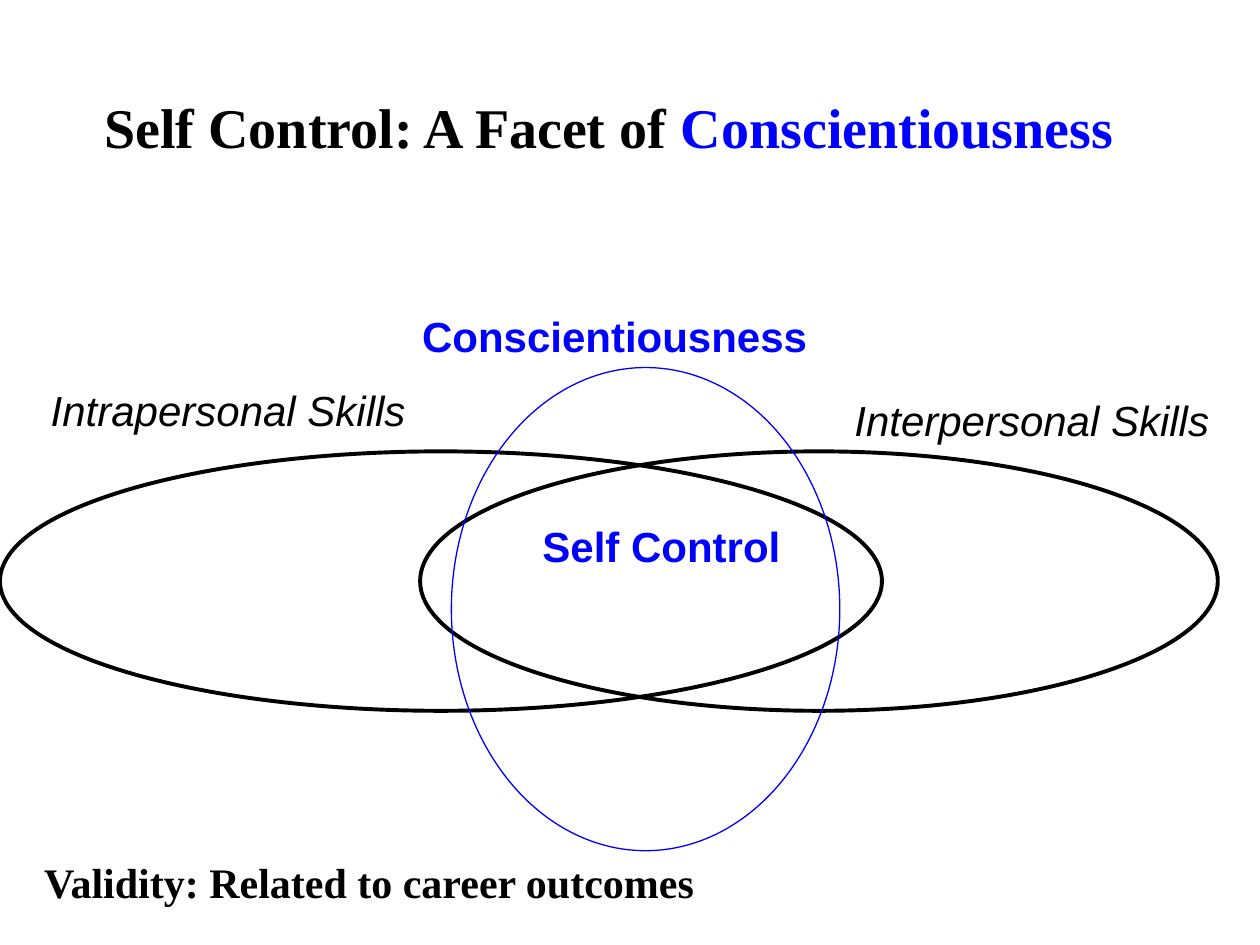
from pptx import Presentation
from pptx.dml.color import RGBColor
from pptx.enum.shapes import MSO_SHAPE
from pptx.enum.text import MSO_ANCHOR, PP_ALIGN
from pptx.util import Cm, Pt

OVAL = MSO_SHAPE.OVAL
TOP, MIDDLE = MSO_ANCHOR.TOP, MSO_ANCHOR.MIDDLE
LEFT, CENTER = PP_ALIGN.LEFT, PP_ALIGN.CENTER


class Theme:
    black = RGBColor(0x00, 0x00, 0x00)
    blue = RGBColor(0x00, 0x00, 0xFF)
    serif = "Times New Roman"
    sans = "Arial"
    title_size = 32
    text_size = 24


# Boxes are left, top, width, height in centimetres.
TITLE_BOX = (0, 1.27, 24.56, 2.54)
TITLE_RUNS = [
    ("Self Control: A Facet of ", Theme.black),
    ("Conscientiousness", Theme.blue),
]

# box, line colour, line width in points
ELLIPSES = [
    ((0, 9.1, 17.78, 5.23), Theme.black, 2.25),
    ((8.47, 9.1, 16.08, 5.23), Theme.black, 2.25),
    ((9.1, 7.41, 7.83, 9.74), Theme.blue, 0.75),
]

# text, box, colour, bold, alignment
LABELS = [
    ("Intrapersonal Skills", (0, 7.62, 9.2, 1.27), Theme.black, False, CENTER),
    ("Interpersonal Skills", (16.2, 7.83, 9.2, 1.27), Theme.black, False, CENTER),
    ("Conscientiousness", (8.26, 6.14, 8.68, 1.27), Theme.blue, True, LEFT),
    ("Self Control", (10.16, 10.37, 6.35, 1.27), Theme.blue, True, CENTER),
]

VALIDITY = "Validity: Related to career outcomes"
VALIDITY_BOX = (0.64, 17.15, 13.72, 1.27)


def to_lengths(box):
    return [Cm(value) for value in box]


def add_text(slide, box, runs, font_name, size, bold=True, italic=False,
             alignment=LEFT, anchor=TOP, wrap=True):
    """Add a one-paragraph text box; runs are (text, colour) pairs."""
    frame = slide.shapes.add_textbox(*to_lengths(box)).text_frame
    frame.word_wrap = wrap
    frame.vertical_anchor = anchor
    paragraph = frame.paragraphs[0]
    paragraph.alignment = alignment
    for text, color in runs:
        run = paragraph.add_run()
        run.text = text
        font = run.font
        font.name, font.size = font_name, Pt(size)
        font.bold, font.italic = bold, italic
        font.color.rgb = color


def add_ellipse(slide, box, color, width):
    shape = slide.shapes.add_shape(OVAL, *to_lengths(box))
    shape.shadow.inherit = False
    shape.fill.background()
    shape.line.color.rgb = color
    shape.line.width = Pt(width)


def main():
    presentation = Presentation()
    presentation.slide_width, presentation.slide_height = Cm(25.4), Cm(19.05)
    slide = presentation.slides.add_slide(presentation.slide_layouts[6])

    add_text(slide, TITLE_BOX, TITLE_RUNS, Theme.serif, Theme.title_size,
             alignment=CENTER, anchor=MIDDLE)
    for box, color, width in ELLIPSES:
        add_ellipse(slide, box, color, width)
    for text, box, color, bold, alignment in LABELS:
        add_text(slide, box, [(text, color)], Theme.sans, Theme.text_size,
                 bold=bold, italic=not bold, alignment=alignment)
    add_text(slide, VALIDITY_BOX, [(VALIDITY, Theme.black)], Theme.serif,
             Theme.text_size, wrap=False)

    presentation.save("out.pptx")


if __name__ == "__main__":
    main()
